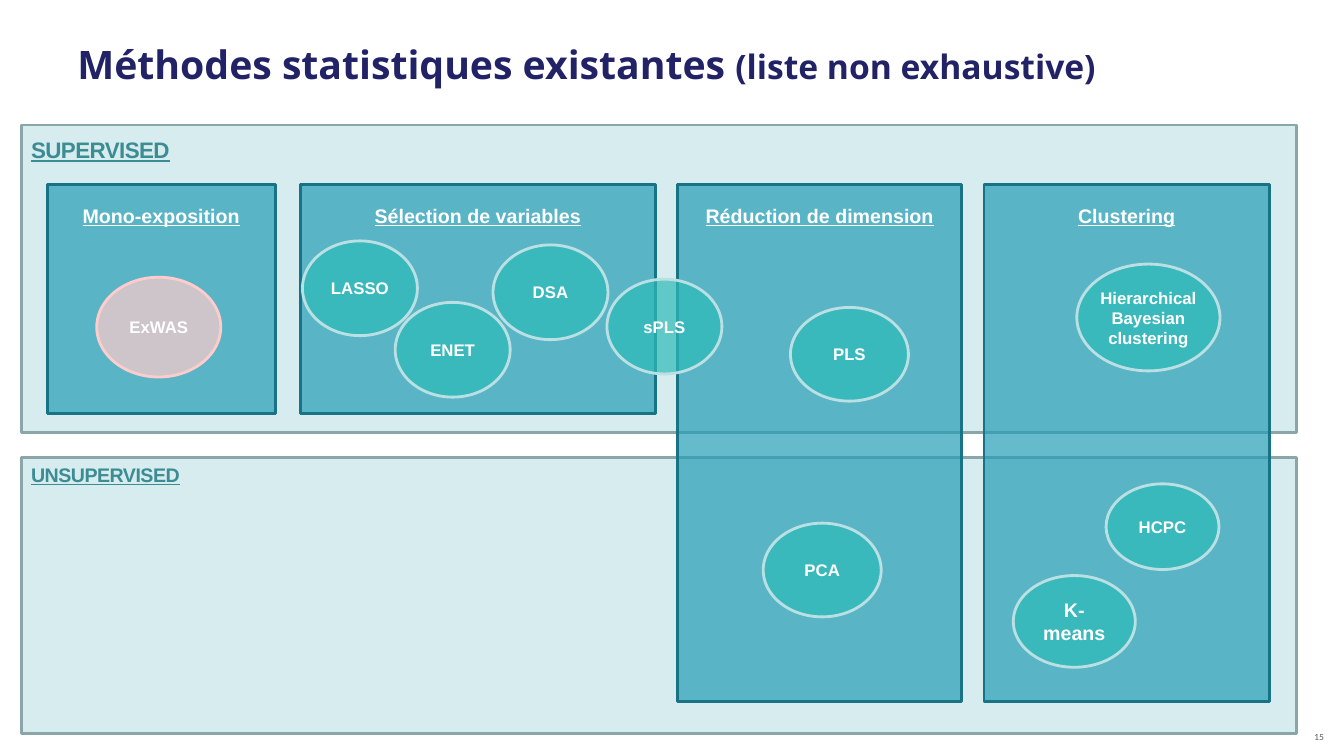
import pptx
import pptx.util
import pptx.dml.color
import pptx.enum.shapes
import pptx.enum.text
import pptx.oxml.ns
from lxml import etree

Inches, Pt = pptx.util.Inches, pptx.util.Pt
SHAPE = pptx.enum.shapes.MSO_SHAPE
ALIGN = pptx.enum.text.PP_ALIGN
ANCHOR = pptx.enum.text.MSO_ANCHOR

COLORS = {
    "title": "222267", "number": "595959", "white": "FFFFFF",
    "band": "D6ECEE", "band_line": "8AA6A8", "band_text": "3C8C93",
    "panel": "249EB6", "panel_line": "177385",
    "method": "2EBBB8", "method_line": "BBE0E3", "exwas": "FFCCCC",
}


def set_font(font, size, color, name="Arial", bold=True, underline=False):
    font.name, font.size, font.bold = name, Pt(size), bold
    font.underline = underline
    font.color.rgb = pptx.dml.color.RGBColor.from_string(COLORS[color])


def add_box(kind, box, fill, line, text, size, color="white", align=ALIGN.CENTER,
            anchor=ANCHOR.TOP, side=0.1, top=0.05, underline=True, alpha=70):
    sp = slide.shapes.add_shape(kind, *map(Inches, box))
    sp.shadow.inherit = False
    sp.fill.solid()
    sp.fill.fore_color.rgb = pptx.dml.color.RGBColor.from_string(COLORS[fill])
    if alpha < 100:
        rgb = sp.fill._xPr.find(".//" + pptx.oxml.ns.qn("a:srgbClr"))
        etree.SubElement(rgb, pptx.oxml.ns.qn("a:alpha"), val=str(alpha * 1000))
    sp.line.color.rgb = pptx.dml.color.RGBColor.from_string(COLORS[line])
    sp.line.width = Pt(2)
    tf = sp.text_frame
    tf.word_wrap = True
    tf.vertical_anchor = anchor
    tf.margin_left = tf.margin_right = Inches(side)
    tf.margin_top, tf.margin_bottom = Inches(top), Inches(0.05)
    p = tf.paragraphs[0]
    p.text, p.alignment = text, align
    set_font(p.font, size, color, underline=underline)
    return p


prs = pptx.Presentation()
prs.slide_width, prs.slide_height = Inches(13.33), Inches(7.5)
slide = prs.slides.add_slide(prs.slide_layouts[6])

tf = slide.shapes.add_textbox(Inches(0.67), Inches(0.01), Inches(12), Inches(1.25)).text_frame
tf.word_wrap = True
tf.vertical_anchor = ANCHOR.MIDDLE
p = tf.paragraphs[0]
for text, size in [("Méthodes statistiques existantes ", 28), ("(liste non exhaustive)", 24)]:
    r = p.add_run()
    r.text = text
    set_font(r.font, size, "title", "Open Sans")

tf = slide.shapes.add_textbox(Inches(12.38), Inches(7.21), Inches(0.85), Inches(0.25)).text_frame
tf.word_wrap = True
p = tf.paragraphs[0]
p.text, p.alignment = "15", ALIGN.RIGHT
set_font(p.font, 6, "number", "Lato", bold=False)

bands = [("SUPERVISED", 1.24, 3.05, 16, 0.11), ("UNSUPERVISED", 4.54, 2.74, 14, 0.05)]
for text, y, height, size, inset in bands:
    p = add_box(SHAPE.RECTANGLE, (0.21, y, 12.65, height), "band", "band_line", text, size,
                "band_text", ALIGN.LEFT, top=inset, alpha=100)
    p.runs[0]._r.get_or_add_rPr().set("spc", "-40")

panels = [
    ("Mono-exposition", 0.47, 2.26, 2.27),
    ("Sélection de variables", 2.98, 3.52, 2.27),
    ("Réduction de dimension", 6.72, 2.82, 5.13),
    ("Clustering", 9.76, 2.83, 5.13),
]
for text, x, width, height in panels:
    add_box(SHAPE.RECTANGLE, (x, 1.83, width, height), "panel", "panel_line", text, 14, top=0.19)

methods = [
    ("sPLS", 6.02, 2.77, 1.14, 0.94),
    ("PCA", 7.57, 5.19, 1.17, 0.93),
    ("HCPC", 10.97, 4.8, 1.12, 0.85),
    ("K-means", 10.05, 5.71, 1.21, 0.91),
    ("Hierarchical Bayesian clustering", 10.68, 2.62, 1.42, 1.06),
    ("DSA", 4.89, 2.43, 1.14, 0.94),
    ("ENET", 3.92, 3, 1.14, 0.94),
    ("LASSO", 3, 2.39, 1.14, 0.94),
    ("ExWAS", 0.96, 2.75, 1.23, 0.99),
    ("PLS", 7.84, 3.05, 1.17, 0.93),
]
for text, *box in methods:
    fill, line = ("exwas", "exwas") if text == "ExWAS" else ("method", "method_line")
    add_box(SHAPE.OVAL, box, fill, line, text, 14 if text == "K-means" else 12,
            anchor=ANCHOR.MIDDLE, side=0.04 if text == "K-means" else 0, underline=False)

prs.save("out.pptx")
